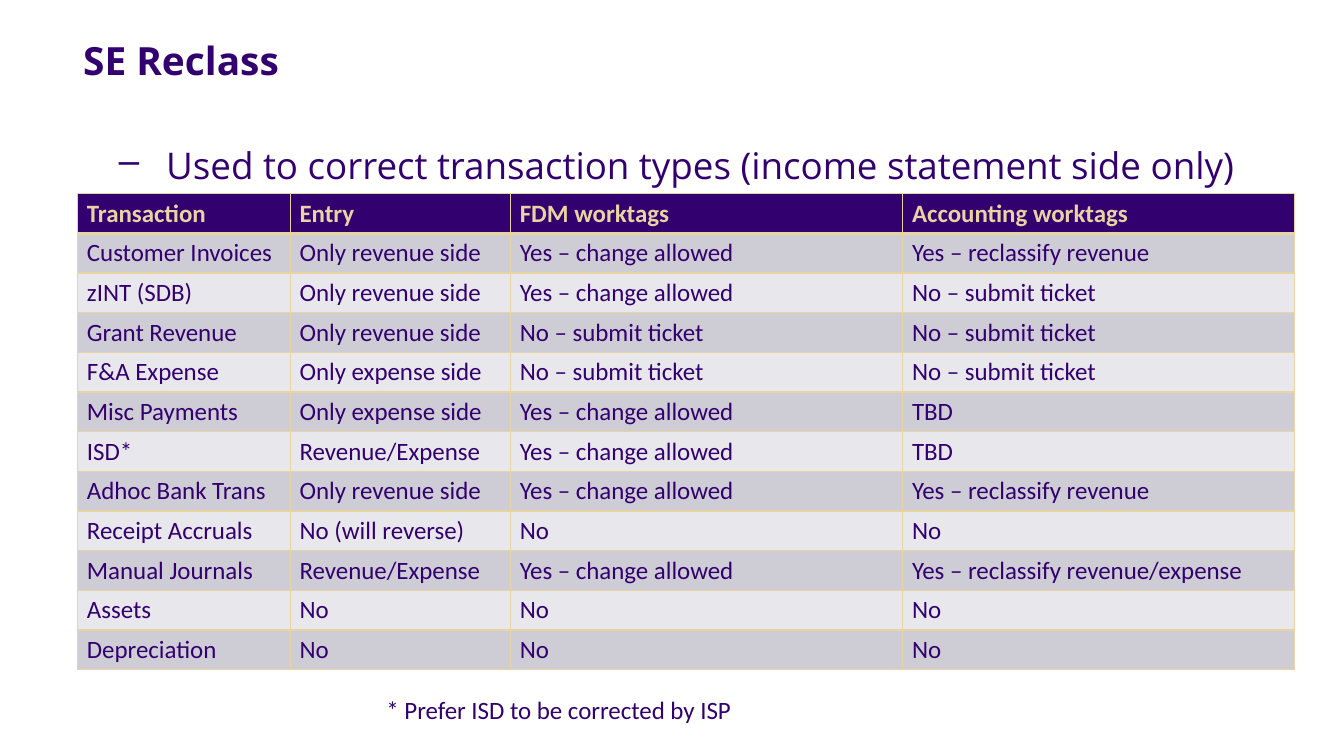
import pptx
import pptx.dml.color
import pptx.enum.text
import pptx.oxml
import pptx.oxml.ns
import pptx.util
from lxml import etree

Inches, Pt = pptx.util.Inches, pptx.util.Pt
COLORS = {"purple": "33006F", "gold": "E8D3A2", "dark_band": "CECCD5",
          "light_band": "E8E7EB"}
HEADER = ("Transaction", "Entry", "FDM worktags", "Accounting worktags")
CHANGE = "Yes – change allowed"
TICKET = "No – submit ticket"
RECLASS = "Yes – reclassify revenue"
REVENUE = "Only revenue side"
EXPENSE = "Only expense side"
BOTH = "Revenue/Expense"
ROWS = [
    ("Customer Invoices", REVENUE, CHANGE, RECLASS),
    ("zINT (SDB)", REVENUE, CHANGE, TICKET),
    ("Grant Revenue", REVENUE, TICKET, TICKET),
    ("F&A Expense", EXPENSE, TICKET, TICKET),
    ("Misc Payments", EXPENSE, CHANGE, "TBD"),
    ("ISD*", BOTH, CHANGE, "TBD"),
    ("Adhoc Bank Trans", REVENUE, CHANGE, RECLASS),
    ("Receipt Accruals", "No (will reverse)", "No", "No"),
    ("Manual Journals", BOTH, CHANGE, "Yes – reclassify revenue/expense"),
    ("Assets", "No", "No", "No"),
    ("Depreciation", "No", "No", "No"),
]


def rgb(name):
    return pptx.dml.color.RGBColor.from_string(COLORS[name])


def add_xml(parent, tag, **attrs):
    return etree.SubElement(parent, pptx.oxml.ns.qn(tag), attrs)


class Deck:
    def __init__(self, prs):
        self.s = prs.slides.add_slide(prs.slide_layouts[5])

    def style(self, p, size, font="Calibri", color="purple", bold=False):
        for r in p.runs:
            r.font.size = Pt(size)
            r.font.name = font
            r.font.bold = bold
            r.font.color.rgb = rgb(color)

    def title(self, text, left, top, width, height):
        sp = self.s.shapes.title
        sp.left, sp.top = Inches(left), Inches(top)
        sp.width, sp.height = Inches(width), Inches(height)
        tf = sp.text_frame
        tf.text = text
        tf.auto_size = pptx.enum.text.MSO_AUTO_SIZE.NONE
        tf.vertical_anchor = pptx.enum.text.MSO_ANCHOR.TOP
        p = tf.paragraphs[0]
        p.alignment = pptx.enum.text.PP_ALIGN.LEFT
        p.line_spacing = 0.8
        self.style(p, 29.6, "Open Sans", bold=True)

    def text(self, text, left, top, width, height, size, font="Calibri"):
        sp = self.s.shapes.add_textbox(Inches(left), Inches(top),
                                       Inches(width), Inches(height))
        tf = sp.text_frame
        tf.word_wrap = True
        tf.text = text
        p = tf.paragraphs[0]
        self.style(p, size, font)
        return p

    def bullet(self, p, char, indent, hanging):
        pPr = p._p.get_or_add_pPr()
        pPr.set("marL", str(Inches(indent)))
        pPr.set("indent", str(-Inches(hanging)))
        add_xml(pPr, "a:buChar", char=char)

    def borders(self, cell, **widths):
        """Draw gold borders; widths in points by side, 1 where not given."""
        tcPr = cell._tc.get_or_add_tcPr()
        for side in "LRTB":
            ln = add_xml(tcPr, f"a:ln{side}", w=str(Pt(widths.get(side, 1))))
            add_xml(add_xml(ln, "a:solidFill"), "a:srgbClr", val=COLORS["gold"])

    def table(self, rows, left, top, col_widths, row_height):
        frame = self.s.shapes.add_table(
            len(rows), len(col_widths), Inches(left), Inches(top),
            Inches(sum(col_widths)), Inches(row_height * len(rows)))
        table = frame.table
        for col, width in zip(table.columns, col_widths):
            col.width = Inches(width)
        for i, values in enumerate(rows):
            table.rows[i].height = Inches(row_height)
            band = "purple" if i == 0 else "dark_band" if i % 2 else "light_band"
            thick = {0: {"B": 3}, 1: {"T": 3}}.get(i, {})
            for j, value in enumerate(values):
                cell = table.cell(i, j)
                cell.text = value
                self.borders(cell, **thick)
                cell.fill.solid()
                cell.fill.fore_color.rgb = rgb(band)
                self.style(cell.text_frame.paragraphs[0], 19,
                           color="purple" if i else "gold", bold=i == 0)


def main():
    prs = pptx.Presentation()
    prs.slide_width, prs.slide_height = Inches(14.22), Inches(8)
    deck = Deck(prs)
    deck.title("SE Reclass", 0.78, 0.43, 12.73, 0.52)
    p = deck.text("Used to correct transaction types (income statement side only)",
                  0.69, 1.46, 13.13, 6.02, 28, "Open Sans")
    deck.bullet(p, "–", 0.97, 0.5)
    deck.table([HEADER] + ROWS, 0.82, 2.05, (2.25, 2.33, 4.15, 4.15), 0.42)
    deck.text("* Prefer ISD to be corrected by ISP", 3.99, 7.3, 5.05, 0.43, 19)
    prs.save("out.pptx")


if __name__ == "__main__":
    main()
